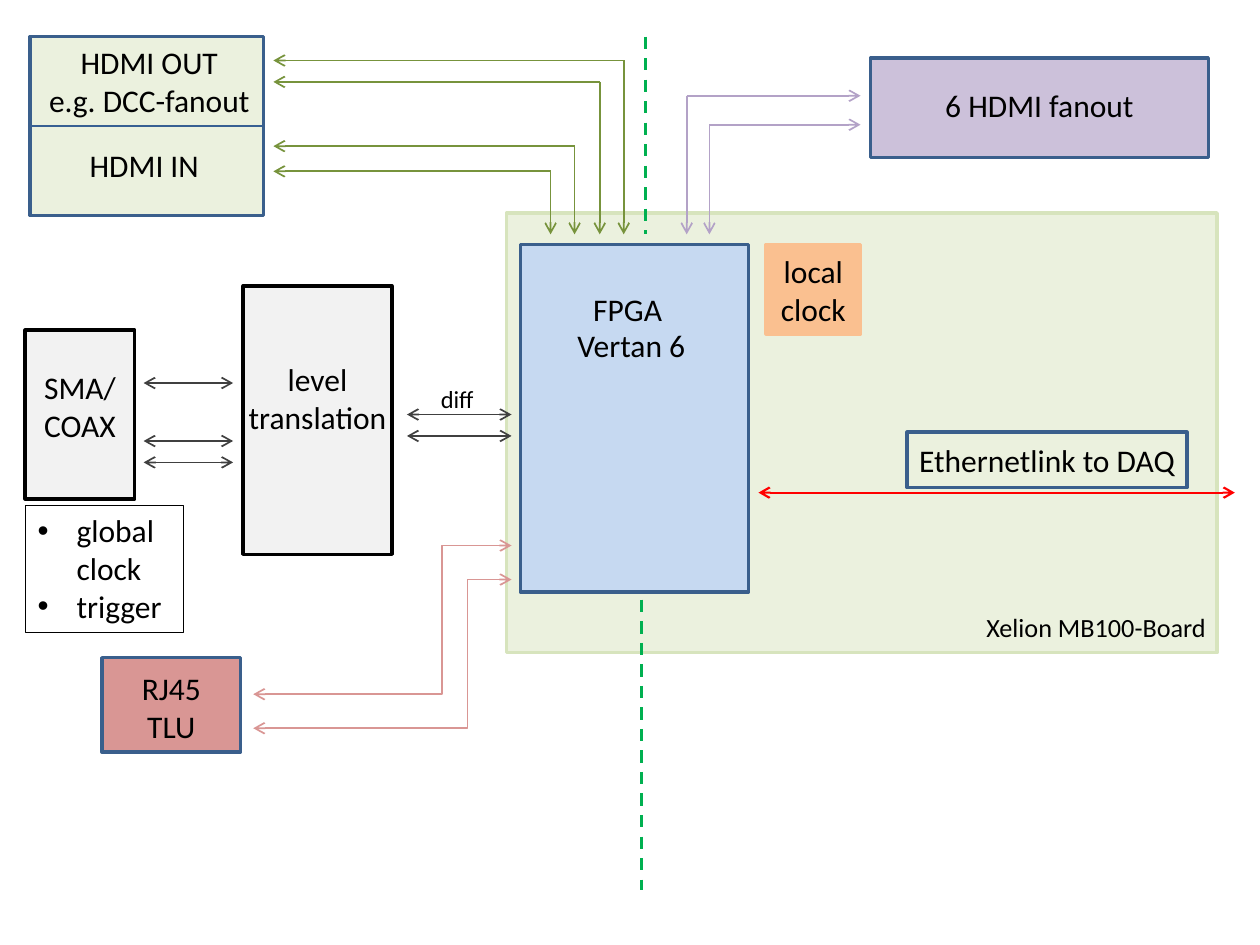
from lxml.etree import SubElement
from pptx import Presentation
from pptx.dml.color import RGBColor
from pptx.enum.dml import MSO_LINE
from pptx.enum.shapes import MSO_CONNECTOR, MSO_SHAPE
from pptx.enum.text import MSO_ANCHOR, PP_ALIGN
from pptx.oxml.ns import qn
from pptx.util import Pt

PX = 9144  # 100 px to the inch
FONT = "Calibri"

BLACK = RGBColor(0x00, 0x00, 0x00)
DARK_GRAY = RGBColor(0x40, 0x40, 0x40)
LIGHT_GRAY = RGBColor(0xF2, 0xF2, 0xF2)
BORDER_BLUE = RGBColor(0x3A, 0x5F, 0x8C)
DIVIDER_BLUE = RGBColor(0x37, 0x60, 0x92)
FPGA_BLUE = RGBColor(0xC6, 0xD9, 0xF1)
PALE_GREEN = RGBColor(0xEB, 0xF1, 0xDE)
BOARD_GREEN = RGBColor(0xD7, 0xE4, 0xBD)
LINK_GREEN = RGBColor(0x77, 0x93, 0x3C)
SPLIT_GREEN = RGBColor(0x00, 0xB0, 0x50)
LILAC = RGBColor(0xCC, 0xC1, 0xDA)
LINK_PURPLE = RGBColor(0xB3, 0xA2, 0xC7)
ROSE = RGBColor(0xD9, 0x96, 0x94)
ORANGE = RGBColor(0xFA, 0xC0, 0x90)
RED = RGBColor(0xFF, 0x00, 0x00)


def px(*lengths):
    return [length * PX for length in lengths]


def write(text_frame, lines, size=18, align=PP_ALIGN.CENTER, side=0, top=5):
    frame_format = {
        "word_wrap": True,
        "vertical_anchor": MSO_ANCHOR.TOP,
        "margin_left": side * PX,
        "margin_right": side * PX,
        "margin_top": top * PX,
        "margin_bottom": 0,
    }
    for name, value in frame_format.items():
        setattr(text_frame, name, value)
    for index, line in enumerate(lines):
        paragraph = text_frame.add_paragraph() if index else text_frame.paragraphs[0]
        paragraph.alignment = align
        run = paragraph.add_run()
        run.text = line
        for name, value in {"size": Pt(size), "name": FONT}.items():
            setattr(run.font, name, value)
        run.font.color.rgb = BLACK


def add_label(slide, bounds, *lines, **text_format):
    text_box = slide.shapes.add_textbox(*px(*bounds))
    write(text_box.text_frame, lines, **text_format)


def add_box(slide, bounds, fill, border, *lines, width=2, **text_format):
    shape = slide.shapes.add_shape(MSO_SHAPE.RECTANGLE, *px(*bounds))
    shape.shadow.inherit = False
    if fill is None:
        shape.fill.background()
    else:
        shape.fill.solid()
        shape.fill.fore_color.rgb = fill
    shape.line.color.rgb = border
    shape.line.width = Pt(width)
    if lines:
        write(shape.text_frame, lines, **text_format)
    return shape


def add_line(slide, start, end, color, width=1.0, ends=(), dash=None, bend=None):
    """Draw a line with arrowheads at the named ends; bend is the elbow's share of the width."""
    kind = MSO_CONNECTOR.STRAIGHT if bend is None else MSO_CONNECTOR.ELBOW
    connector = slide.shapes.add_connector(kind, *px(*start, *end))
    connector.line.color.rgb = color
    connector.line.width = Pt(width)
    if dash:
        connector.line.dash_style = dash
    properties = connector._element.spPr
    for name in ends:
        SubElement(properties.find(qn("a:ln")), qn(f"a:{name}End"), type="arrow")
    SubElement(properties, qn("a:effectLst"))
    if bend is not None:
        guides = properties.find(qn("a:prstGeom")).find(qn("a:avLst"))
        SubElement(guides, qn("a:gd"), name="adj1", fmla=f"val {round(bend * 100000)}")
    return connector


def add_double_arrow(slide, start, end, color, **line_format):
    return add_line(slide, start, end, color, ends=("head", "tail"), **line_format)


def add_corner_link(slide, corner, side_x, bottom, color):
    """Draw two arrows that leave the corner, one sideways and one down."""
    for end in ((side_x, corner[1]), (corner[0], bottom)):
        add_line(slide, corner, end, color, ends=("tail",))


def add_board(slide, left, top, width, height):
    add_box(slide, (left, top, width, height), PALE_GREEN, BOARD_GREEN)
    add_box(slide, (left + 11, top + 25, 181, 276), FPGA_BLUE, BORDER_BLUE)
    add_label(slide, (left + 59, top + 56, 102, 40), "FPGA", align=PP_ALIGN.LEFT, side=10)
    add_label(slide, (left + 20, top + 85, 158, 40), "Vertan 6")
    add_box(slide, (left + 206, top + 25, 75, 71), ORANGE, ORANGE,
            "local clock", side=5, top=6)
    add_box(slide, (left + 318, top + 174, 222, 44), None, BORDER_BLUE,
            "Ethernetlink to DAQ", top=7)
    add_double_arrow(slide, (left + 200, top + 222), (left + 578, top + 222), RED, width=1.25)
    add_label(slide, (left + 373, top + 311, 190, 36), "Xelion MB100-Board",
              size=15, align=PP_ALIGN.CENTER)


def add_hdmi_ports(slide, left, top, width, height):
    ports = add_box(slide, (left, top, width, height), PALE_GREEN, BORDER_BLUE)
    middle = top + height // 2
    divider = add_line(slide, (left, middle), (left + width, middle), DIVIDER_BLUE, width=1.25)
    divider.begin_connect(ports, 1)
    divider.end_connect(ports, 3)
    add_label(slide, (left - 4, top, width + 12, 71), "HDMI OUT", "e.g. DCC-fanout")
    add_label(slide, (left - 4, top + 82, width + 4, 40), "HDMI IN")
    for corner_x, drop in ((495, 19), (476, 36), (456, 87), (437, 107)):
        add_corner_link(slide, (corner_x, top + drop), left + width + 8, 186, LINK_GREEN)


def add_fanout(slide, left, top, width, height):
    add_box(slide, (left, top, width, height), LILAC, BORDER_BLUE, "6 HDMI fanout", top=22)
    for corner_x, drop in ((545, 30), (563, 53)):
        add_corner_link(slide, (corner_x, top + drop), left - 8, 186, LINK_PURPLE)


def add_level_translation(slide, left, top, width, height):
    add_box(slide, (left, top, width, height), LIGHT_GRAY, BLACK,
            "level", "translation", top=59)
    for drop in (102, 119):
        add_double_arrow(slide, (left + width + 12, top + drop),
                         (left + width + 95, top + drop), DARK_GRAY)
    add_label(slide, (left + 147, top + 73, 66, 34), "diff",
              size=14, align=PP_ALIGN.LEFT, side=10)


def add_coax_inputs(slide, left, top, width, height):
    add_box(slide, (left, top, width, height), LIGHT_GRAY, BLACK, "SMA/", "COAX", top=30)
    for drop in (42, 88, 105):
        add_double_arrow(slide, (left + width + 7, top + drop),
                         (left + width + 78, top + drop), DARK_GRAY)
    signals = add_box(slide, (left, top + height + 5, 126, 101), None, BLACK,
                      "global clock", "trigger", width=0.75,
                      align=PP_ALIGN.LEFT, side=10)
    for paragraph in signals.text_frame.paragraphs:
        properties = paragraph._p.get_or_add_pPr()
        properties.set("marL", str(31 * PX))
        properties.set("indent", str(-31 * PX))
        SubElement(properties, qn("a:buFont"), typeface="Arial")
        SubElement(properties, qn("a:buChar"), char="•")


def add_trigger_unit(slide, left, top, width, height):
    add_box(slide, (left, top, width, height), ROSE, BORDER_BLUE, "RJ45", "TLU", top=9)
    for drop, bend in ((29, 0.73), (56, 0.83)):
        start = (left + width + 10, top + drop)
        add_double_arrow(slide, start, (start[0] + 205, start[1] - 118), ROSE, bend=bend)


def add_split_line(slide):
    for x, top, bottom in ((512, 29, 186), (509, 476, 706)):
        add_line(slide, (x, top), (x, bottom), SPLIT_GREEN, width=1.75, dash=MSO_LINE.DASH)


def main():
    presentation = Presentation()
    presentation.slide_width, presentation.slide_height = px(1000, 750)
    slide = presentation.slides.add_slide(presentation.slide_layouts[6])
    add_board(slide, 402, 169, 564, 349)
    add_split_line(slide)
    add_level_translation(slide, 193, 227, 118, 213)
    add_coax_inputs(slide, 20, 262, 87, 134)
    add_trigger_unit(slide, 81, 522, 110, 75)
    add_fanout(slide, 691, 46, 268, 79)
    add_hdmi_ports(slide, 24, 29, 185, 142)
    presentation.save("out.pptx")


if __name__ == "__main__":
    main()
